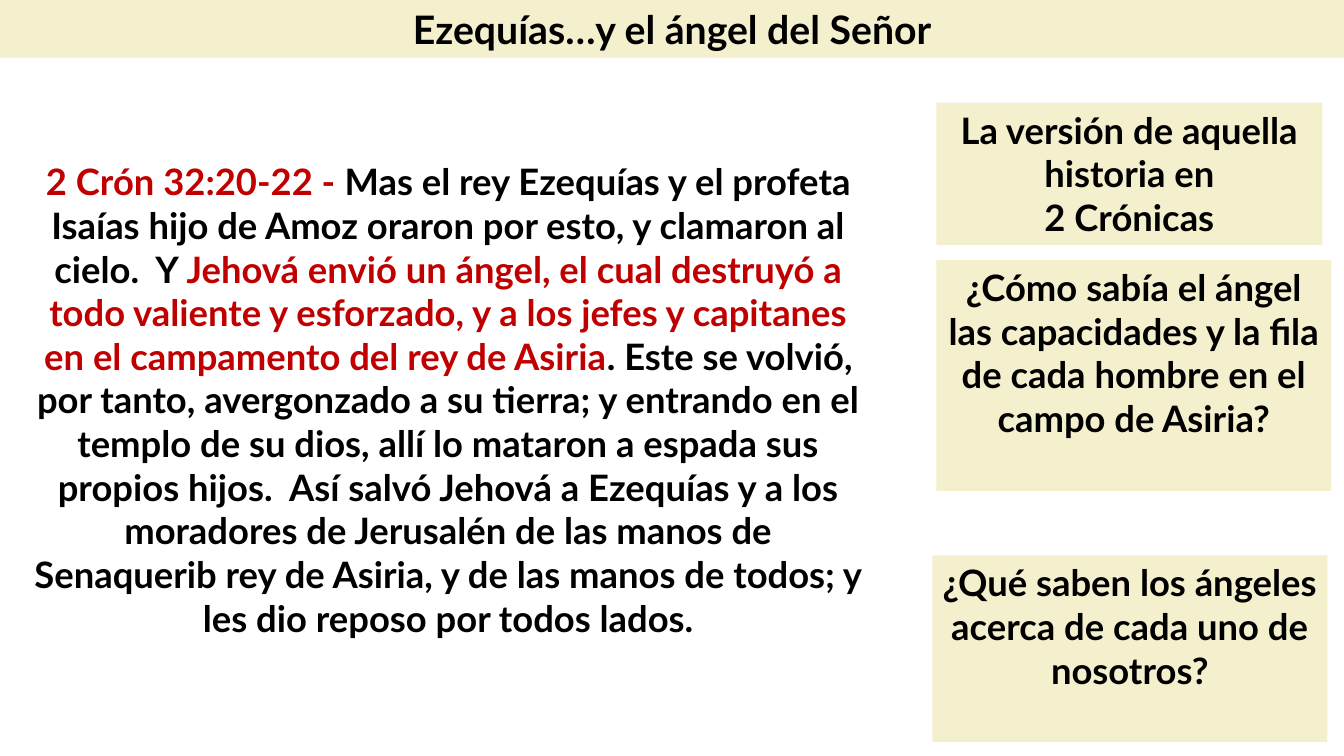
import pptx
import pptx.dml.color
import pptx.enum.shapes
import pptx.enum.text
import pptx.oxml.ns
import pptx.util
from lxml import etree

COLORS = {"cream": "F4EFCC", "ink": "000000", "red": "C00000"}


class Deck:
    """Holds the style and the current slide, and adds its elements."""

    font = "Lato"
    title_size = 28
    body_size = 26

    def __init__(self, width, height):
        self.prs = pptx.Presentation()
        self.prs.slide_width = pptx.util.Pt(width)
        self.prs.slide_height = pptx.util.Pt(height)
        self.s = self.prs.slides.add_slide(self.prs.slide_layouts[1])

    def rgb(self, name):
        return pptx.dml.color.RGBColor.from_string(COLORS[name])

    def place(self, sp, box):
        sp.left, sp.top, sp.width, sp.height = [pptx.util.Pt(v) for v in box]

    def fill(self, sp):
        sp.fill.solid()
        sp.fill.fore_color.rgb = self.rgb("cream")

    def add_text(self, sp, paragraphs, size):
        tf = sp.text_frame
        tf.word_wrap = True
        tf.auto_size = pptx.enum.text.MSO_AUTO_SIZE.NONE
        tf.vertical_anchor = pptx.enum.text.MSO_ANCHOR.TOP
        for i, runs in enumerate(paragraphs):
            p = tf.add_paragraph() if i else tf.paragraphs[0]
            p.alignment = pptx.enum.text.PP_ALIGN.CENTER
            p.space_before = pptx.util.Pt(0)
            for text, color in runs:
                r = p.add_run()
                r.text = text
                r.font.name = self.font
                r.font.size = pptx.util.Pt(size)
                r.font.bold = True
                r.font.color.rgb = self.rgb(color)

    def title(self, text, box):
        sp = self.s.shapes.title
        self.place(sp, box)
        self.fill(sp)
        self.add_text(sp, [[(text, "ink")]], self.title_size)

    def passage(self, runs, box):
        sp = self.s.placeholders[1]
        self.place(sp, box)
        self.add_text(sp, [runs], self.body_size)
        pPr = sp.text_frame.paragraphs[0]._p.get_or_add_pPr()
        pPr.set("marL", "0")
        pPr.set("indent", "0")
        etree.SubElement(pPr, pptx.oxml.ns.qn("a:buNone"))

    def note(self, lines, box):
        sp = self.s.shapes.add_shape(
            pptx.enum.shapes.MSO_SHAPE.RECTANGLE, *[pptx.util.Pt(v) for v in box])
        sp.shadow.inherit = False
        sp.line.fill.background()
        self.fill(sp)
        self.add_text(sp, [[(line, "ink")] for line in lines], self.body_size)


def main():
    deck = Deck(960, 540)
    deck.title("Ezequías…y el ángel del Señor", (0, 0, 960, 41.2))
    deck.passage([
        ("2 Crón 32:20-22 - ", "red"),
        ("Mas el rey Ezequías y el profeta Isaías hijo de Amoz oraron por esto, "
         "y clamaron al cielo.  Y ", "ink"),
        ("Jehová envió un ángel, el cual destruyó a todo valiente y esforzado, "
         "y a los jefes y capitanes en el campamento del rey de Asiria", "red"),
        (". Este se volvió, por tanto, avergonzado a su tierra; y entrando en el "
         "templo de su dios, allí lo mataron a espada sus propios hijos.  Así "
         "salvó Jehová a Ezequías y a los moradores de Jerusalén de las manos de "
         "Senaquerib rey de Asiria, y de las manos de todos; y les dio reposo por "
         "todos lados.", "ink"),
    ], (14.4, 110.2, 612, 416.9))
    deck.note(["La versión de aquella historia en", "2 Crónicas"],
              (668.9, 73.4, 275.8, 101.5))
    deck.note(["¿Cómo sabía el ángel las capacidades y la fila de cada hombre en el "
               "campo de Asiria?"], (668.9, 185.8, 282.2, 164.9))
    deck.note(["¿Qué saben los ángeles acerca de cada uno de nosotros?"],
              (666, 396.7, 282.2, 133.2))
    deck.prs.save("out.pptx")


if __name__ == "__main__":
    main()
